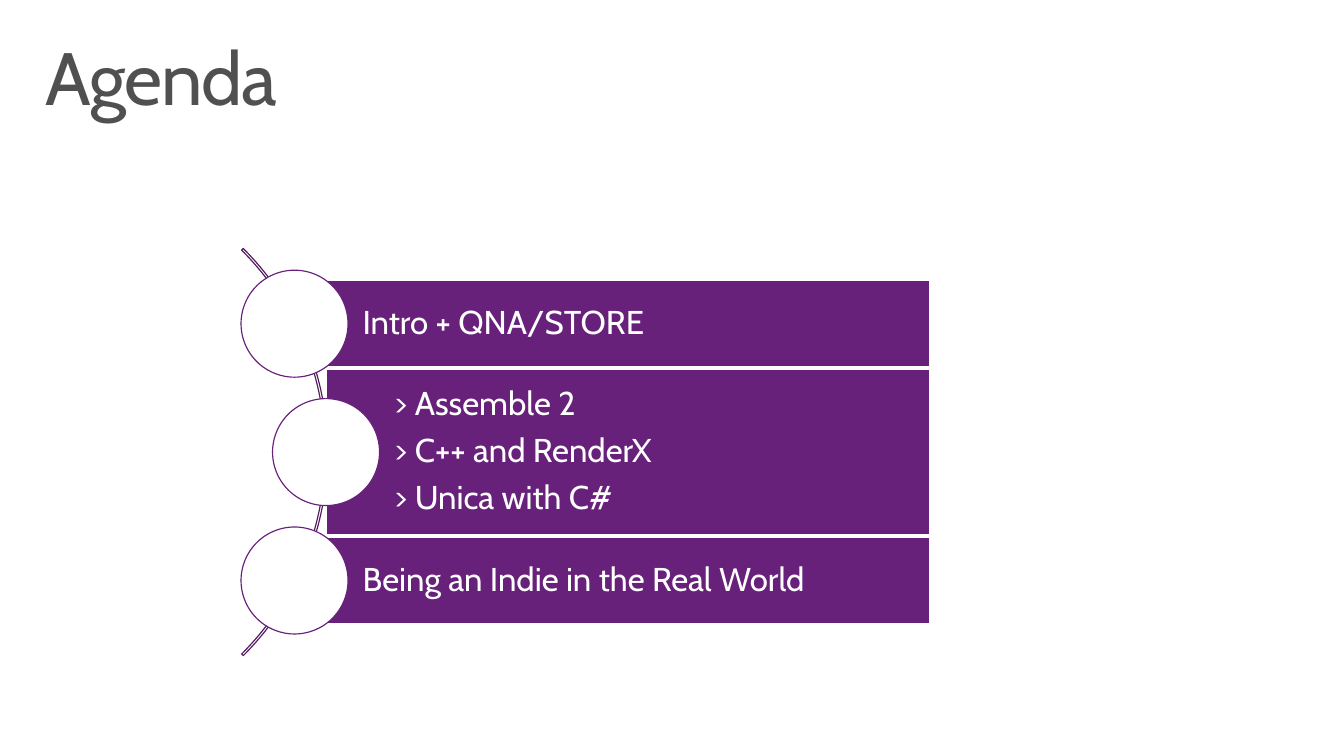
from dataclasses import dataclass
from pptx import Presentation
from pptx.dml.color import RGBColor
from pptx.enum import shapes, text
from pptx.util import Cm, Pt

TITLE = "Agenda"
TOPICS = [
    (["Intro + QNA/STORE"], 7.57, 2.2),
    (["> Assemble 2", "> C++ and RenderX", "> Unica with C#"], 8.38, 4.25),
    (["Being an Indie in the Real World"], 7.57, 2.2),
]
MID, PITCH, RIGHT = 11.62, 3.3, 23.89
DOT, ARC, ARC_X = 2.75, 14.8, -6.38


@dataclass(frozen=True)
class Theme:
    font: str = "Cabin"
    plum: str = "68217A"
    dark: str = "531A62"
    white: str = "FFFFFF"
    gray: str = "505050"
    head: int = 54
    body: int = 24
    line: float = 0.85


theme = Theme()
kind = shapes.MSO_SHAPE


def place(shape, x, y, w, h):
    shape.left, shape.top, shape.width, shape.height = map(Cm, (x, y, w, h))


def write(shape, lines, size, color, pad, anchor, after=0, track=0):
    frame = shape.text_frame
    frame.word_wrap = True
    frame.auto_size = text.MSO_AUTO_SIZE.NONE
    frame.vertical_anchor = anchor
    (frame.margin_left, frame.margin_top,
     frame.margin_right, frame.margin_bottom) = map(Cm, pad)
    for i, line in enumerate(lines):
        para = frame.paragraphs[0] if i == 0 else frame.add_paragraph()
        para.alignment = text.PP_ALIGN.LEFT
        para.line_spacing = 0.9
        para.space_before = Pt(0)
        para.space_after = Pt(after)
        run = para.add_run()
        run.text = line
        run.font.name = theme.font
        run.font.size = Pt(size)
        run.font.color.rgb = RGBColor.from_string(color)
        if track:
            run._r.get_or_add_rPr().set("spc", str(track))


def draw(slide, form, x, y, w, h, line, fill=None):
    shape = slide.shapes.add_shape(form, Cm(x), Cm(y), Cm(w), Cm(h))
    shape.shadow.inherit = False
    if fill:
        shape.fill.solid()
        shape.fill.fore_color.rgb = RGBColor.from_string(fill)
    else:
        shape.fill.background()
    shape.line.color.rgb = RGBColor.from_string(line)
    shape.line.width = Pt(theme.line)
    return shape


def main():
    deck = Presentation()
    deck.slide_width, deck.slide_height = Cm(34.54), Cm(19.43)
    slide = deck.slides.add_slide(deck.slide_layouts[5])

    title = slide.shapes.title
    place(title, 0.76, 0.81, 33.02, 2.54)
    write(title, [TITLE], theme.head, theme.gray, (0.41, 0.25, 0.41, 0.25),
          text.MSO_ANCHOR.TOP, track=-100)

    arc = draw(slide, kind.BLOCK_ARC, ARC_X, MID - ARC / 2, ARC, ARC, theme.dark)
    for i, value in enumerate((189, 27, 0.004)):
        arc.adjustments[i] = value

    for i, (lines, x, high) in enumerate(TOPICS):
        y = MID + (i - 1) * PITCH
        bar = draw(slide, kind.RECTANGLE, x, y - high / 2, RIGHT - x, high,
                   theme.white, theme.plum)
        write(bar, lines, theme.body, theme.white, (1.75, 0.18, 0.18, 0.18),
              text.MSO_ANCHOR.MIDDLE, after=8.4)
        draw(slide, kind.OVAL, x - DOT / 2, y - DOT / 2, DOT, DOT,
             theme.plum, theme.white)

    deck.save("out.pptx")


if __name__ == "__main__":
    main()
